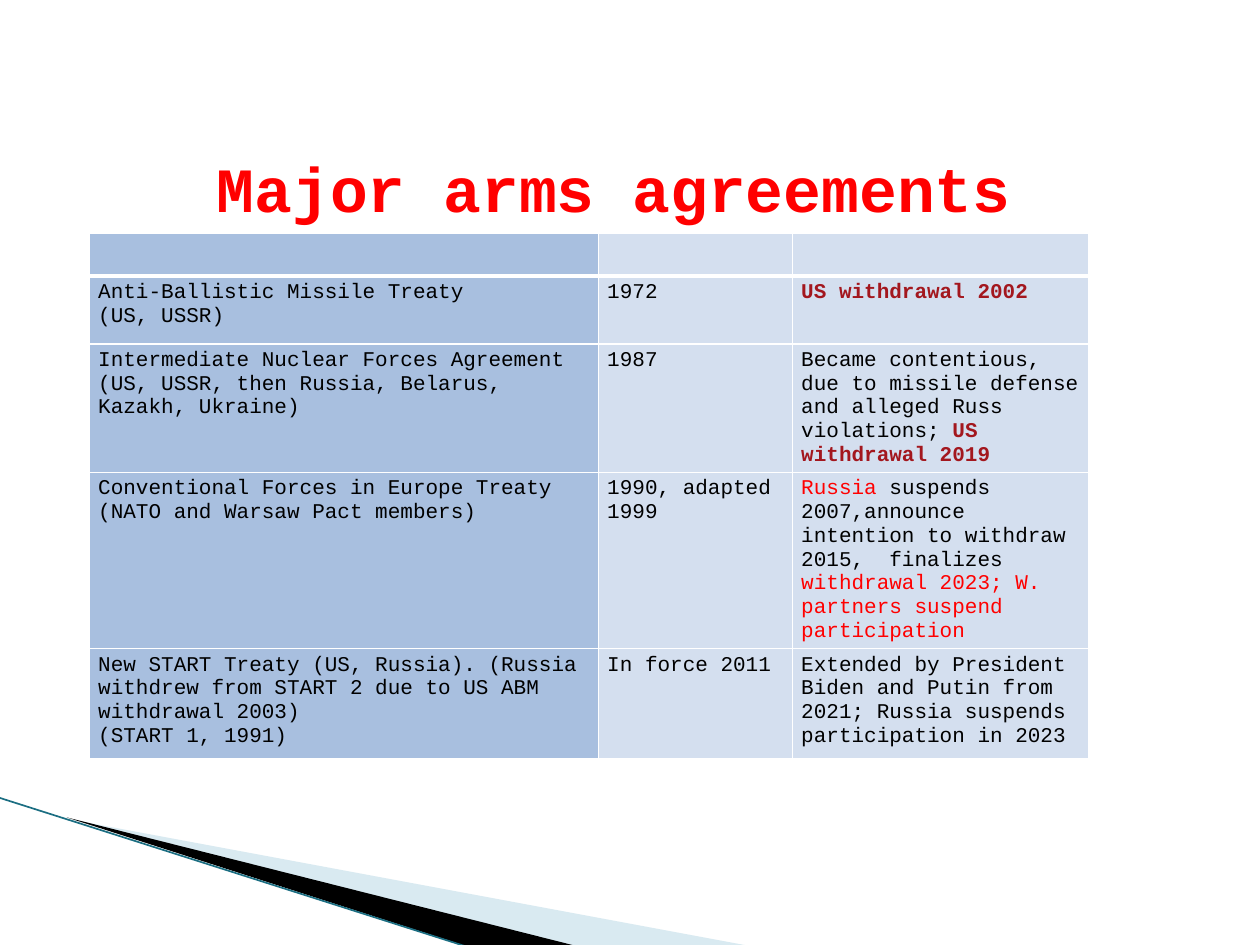
from lxml.etree import SubElement
from pptx import Presentation
from pptx.dml.color import RGBColor
from pptx.enum.text import MSO_ANCHOR, PP_ALIGN
from pptx.oxml.ns import qn
from pptx.util import Inches, Pt

WIDTH, HEIGHT = Inches(10), Inches(7.5)
FONT = "Courier New"
BLACK = RGBColor(0, 0, 0)
RED = RGBColor(0xFF, 0, 0)
MAROON = RGBColor(0xA3, 0x17, 0x1E)
PALE = RGBColor(0xA0, 0xCB, 0xDC)
TEAL = RGBColor(0x1B, 0x6E, 0x82)
MID_BLUE = RGBColor(0xA8, 0xBF, 0xDF)
LIGHT_BLUE = RGBColor(0xD4, 0xDF, 0xEF)

# Column widths and row heights, in percent of the slide
COLS = [40.4, 15.4, 23.5]
ROWS = [4.5, 7.2, 13.5, 18.55, 11.7]

# Each cell is a list of paragraphs; each paragraph is a list of (text, format) runs
BOLD = {"color": MAROON, "bold": True}
CELLS = [
    [[], [], []],
    [
        [[("Anti-Ballistic Missile Treaty", {})], [("(US, USSR)", {})]],
        [[("1972", {})]],
        [[("US withdrawal 2002", BOLD)]],
    ],
    [
        [[("Intermediate Nuclear Forces Agreement", {})],
         [("(US, USSR, then Russia, Belarus, Kazakh, Ukraine)", {})]],
        [[("1987", {})]],
        [[("Became contentious, due to missile defense and alleged Russ violations; ", {}),
          ("US withdrawal 2019", BOLD)]],
    ],
    [
        [[("Conventional Forces in Europe Treaty", {})],
         [("(NATO and Warsaw Pact members)", {})]],
        [[("1990, adapted 1999", {})]],
        [[("Russia", {"color": RED}),
          (" suspends 2007,announce intention to withdraw 2015,  finalizes ", {}),
          ("withdrawal 2023; W. partners suspend  participation", {"color": RED})]],
    ],
    [
        [[("New START Treaty (US, Russia). (Russia withdrew from START 2 "
           "due to US ABM withdrawal 2003)", {})],
         [("(START 1, 1991)", {})]],
        [[("In force 2011", {})]],
        [[("Extended by President Biden and Putin from 2021; "
           "Russia suspends participation in 2023", {})]],
    ],
]


def wide(share):
    """Percent of the slide's width."""
    return round(WIDTH * share / 100)


def tall(share):
    """Percent of the slide's height."""
    return round(HEIGHT * share / 100)


def add_text(para, text, size=12, color=BLACK, bold=False):
    run = para.add_run()
    run.text = text
    font = run.font
    font.name, font.size, font.bold = FONT, Pt(size), bold
    font.color.rgb = color


def add_wedge(slide, points, color, alpha=None):
    """Filled outline through points given in percent of the slide."""
    spots = [(wide(x), tall(y)) for x, y in points]
    form = slide.shapes.build_freeform(*spots[0])
    form.add_line_segments(spots[1:], close=True)
    shape = form.convert_to_shape()
    shape.shadow.inherit = False
    shape.line.fill.background()
    shape.fill.solid()
    shape.fill.fore_color.rgb = color
    if alpha:
        tint = shape.fill._xPr.find(qn("a:solidFill"))[0]
        SubElement(tint, qn("a:alpha"), val=str(alpha * 1000))


def add_edge(slide, start, end):
    line = slide.shapes.add_connector(
        1, wide(start[0]), tall(start[1]), wide(end[0]), tall(end[1]))
    line.line.color.rgb = TEAL
    line.line.width = Pt(0.95)
    SubElement(line._element.spPr, qn("a:effectLst"))


def add_borders(cell, base):
    """White cell borders, with the given width in points at the base."""
    props = cell._tc.get_or_add_tcPr()
    for side, width in zip("LRTB", (1, 1, 1, base)):
        line = SubElement(props, qn(f"a:ln{side}"), w=str(Pt(width)))
        fill = SubElement(line, qn("a:solidFill"))
        SubElement(fill, qn("a:srgbClr"), val="FFFFFF")


def fill_cell(cell, paras, color, base):
    add_borders(cell, base)
    cell.fill.solid()
    cell.fill.fore_color.rgb = color
    cell.margin_left = cell.margin_right = Inches(0.07)
    cell.margin_top = cell.margin_bottom = Inches(0.04)
    frame = cell.text_frame
    for i, runs in enumerate(paras):
        para = frame.add_paragraph() if i else frame.paragraphs[0]
        for text, style in runs:
            add_text(para, text, **style)
    if not paras:
        SubElement(frame.paragraphs[0]._p, qn("a:endParaRPr"), sz="1200")


def add_grid(slide):
    table = slide.shapes.add_table(
        len(ROWS), len(COLS), wide(7.1), tall(24.7),
        wide(sum(COLS)), tall(sum(ROWS))).table
    for col, share in zip(table.columns, COLS):
        col.width = wide(share)
    for r, share in enumerate(ROWS):
        table.rows[r].height = tall(share)
        for c, paras in enumerate(CELLS[r]):
            color = LIGHT_BLUE if c else MID_BLUE
            fill_cell(table.cell(r, c), paras, color, 1 if r else 3)


def set_title(slide, text):
    title = slide.shapes.title
    title.left, title.top = wide(16.2), tall(15.5)
    title.width, title.height = wide(67.5), tall(8.7)
    title.text_frame.vertical_anchor = MSO_ANCHOR.MIDDLE
    para = title.text_frame.paragraphs[0]
    para.alignment = PP_ALIGN.LEFT
    add_text(para, text, size=36, color=RED, bold=True)


def main():
    deck = Presentation()
    deck.slide_width, deck.slide_height = WIDTH, HEIGHT
    slide = deck.slides.add_slide(deck.slide_layouts[5])
    add_wedge(slide, [(5.5, 86.7), (59.5, 100.1), (45.6, 100.1)], PALE, alpha=40)
    add_wedge(slide, [(5.3, 86.5), (45.7, 100.1), (37.2, 100.2)], BLACK)
    add_edge(slide, (-0.1, 84.4), (37.1, 100.2))
    add_grid(slide)
    set_title(slide, "Major arms agreements")
    deck.save("out.pptx")


if __name__ == "__main__":
    main()
